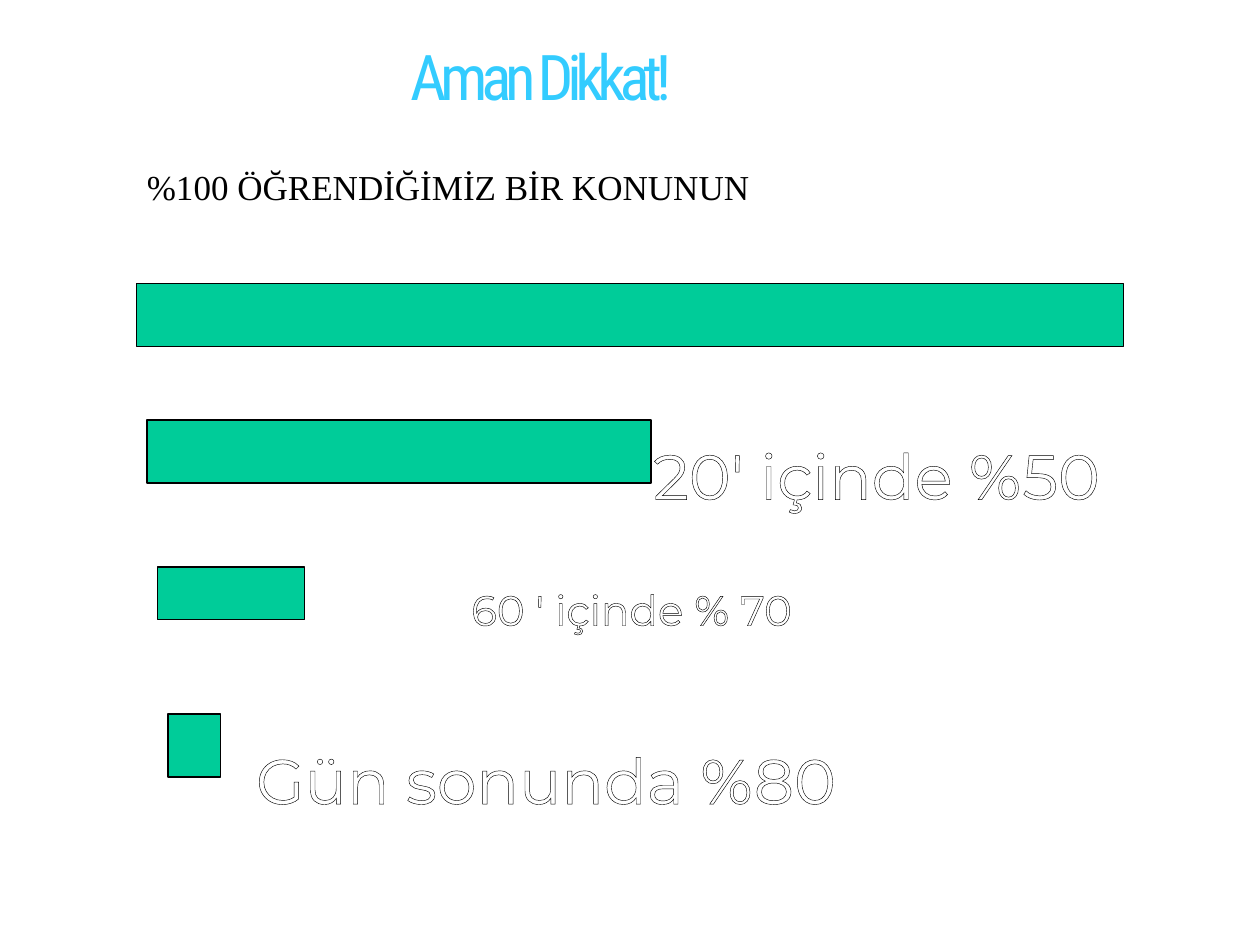
from collections import namedtuple
from dataclasses import dataclass

from lxml import etree
from pptx import Presentation, util as u
from pptx.dml.color import RGBColor
from pptx.enum import shapes, text
from pptx.oxml.ns import qn

Box = namedtuple("Box", "left top width height")


@dataclass(frozen=True)
class Theme:
    title_font: str = "Roboto Condensed"
    heading_font: str = "Times New Roman"
    label_font: str = "Montserrat"
    title_color: str = "33CCFF"
    title_outline: str = "000099"
    bar_color: str = "00CC99"
    ink: str = "000000"
    paper: str = "FFFFFF"
    large: int = 36
    medium: int = 24
    small: int = 20
    line: float = 0.75


THEME = Theme()
CELL = u.Inches(1) / 12
COLUMNS, ROWS = 120, 90

BARS = [
    (Box(0, 0, 94, 6), None),
    (Box(1, 13, 48, 6), ("20' içinde %50", Box(56, 14, 29, 6), THEME.large)),
    (Box(2, 27, 14, 5), ("60 ' içinde % 70", Box(30, 28, 34.3, 5.6), THEME.medium)),
    (Box(3, 41, 5, 6), ("Gün sonunda %80", Box(19, 43, 40, 4), THEME.large)),
]


def cells(box):
    return [u.Emu(round(value * CELL)) for value in box]


def within(region, box):
    return Box(region.left + box.left, region.top + box.top, box.width, box.height)


def outline_text(run, color, width):
    properties = run.font._element
    line = etree.Element(qn("a:ln"), w=str(u.Pt(width)))
    fill = etree.SubElement(line, qn("a:solidFill"))
    etree.SubElement(fill, qn("a:srgbClr"), val=color)
    properties.insert(0, line)


def write(shape, content, font, size, color, align=text.PP_ALIGN.CENTER,
          spacing=None, outline=None, outline_width=THEME.line):
    frame = shape.text_frame
    frame.word_wrap = False
    frame.auto_size = text.MSO_AUTO_SIZE.NONE
    frame.vertical_anchor = text.MSO_ANCHOR.TOP
    paragraph = frame.paragraphs[0]
    paragraph.alignment = align
    run = paragraph.add_run()
    run.text = content
    run.font.name = font
    run.font.size = u.Pt(size)
    run.font.color.rgb = RGBColor.from_string(color)
    if spacing is not None:
        run.font._element.set("spc", str(round(spacing * 100)))
    if outline:
        outline_text(run, outline, outline_width)


def add_title(slide, box):
    title = slide.shapes.title
    title.left, title.top, title.width, title.height = cells(box)
    write(title, "Aman Dikkat!", THEME.title_font, THEME.large, THEME.title_color,
          spacing=-3.6, outline=THEME.title_outline, outline_width=1)


def add_heading(slide, box):
    heading = slide.shapes.add_textbox(*cells(box))
    write(heading, "%100 ÖĞRENDİĞİMİZ BİR KONUNUN", THEME.heading_font,
          THEME.small, THEME.ink, align=text.PP_ALIGN.LEFT)


def add_bar(slide, box):
    bar = slide.shapes.add_shape(shapes.MSO_SHAPE.RECTANGLE, *cells(box))
    bar.shadow.inherit = False
    bar.fill.solid()
    bar.fill.fore_color.rgb = RGBColor.from_string(THEME.bar_color)
    bar.line.color.rgb = RGBColor.from_string(THEME.ink)
    bar.line.width = u.Pt(THEME.line)


def add_forgetting_bars(slide, region):
    for bar_box, label in BARS:
        add_bar(slide, within(region, bar_box))
        if label:
            content, label_box, size = label
            caption = slide.shapes.add_textbox(*cells(within(region, label_box)))
            write(caption, content, THEME.label_font, size, THEME.paper,
                  outline=THEME.ink)


def main():
    presentation = Presentation()
    presentation.slide_width = u.Emu(round(COLUMNS * CELL))
    presentation.slide_height = u.Emu(round(ROWS * CELL))
    slide = presentation.slides.add_slide(presentation.slide_layouts.get_by_name("Title Only"))
    slide.background.fill.solid()
    slide.background.fill.fore_color.rgb = RGBColor.from_string(THEME.paper)
    add_title(slide, Box(15, 3, 73, 8.6))
    add_heading(slide, Box(12.8, 15.2, 59.9, 5.2))
    add_forgetting_bars(slide, Box(13, 27, 94, 47))
    presentation.save("out.pptx")


if __name__ == "__main__":
    main()
